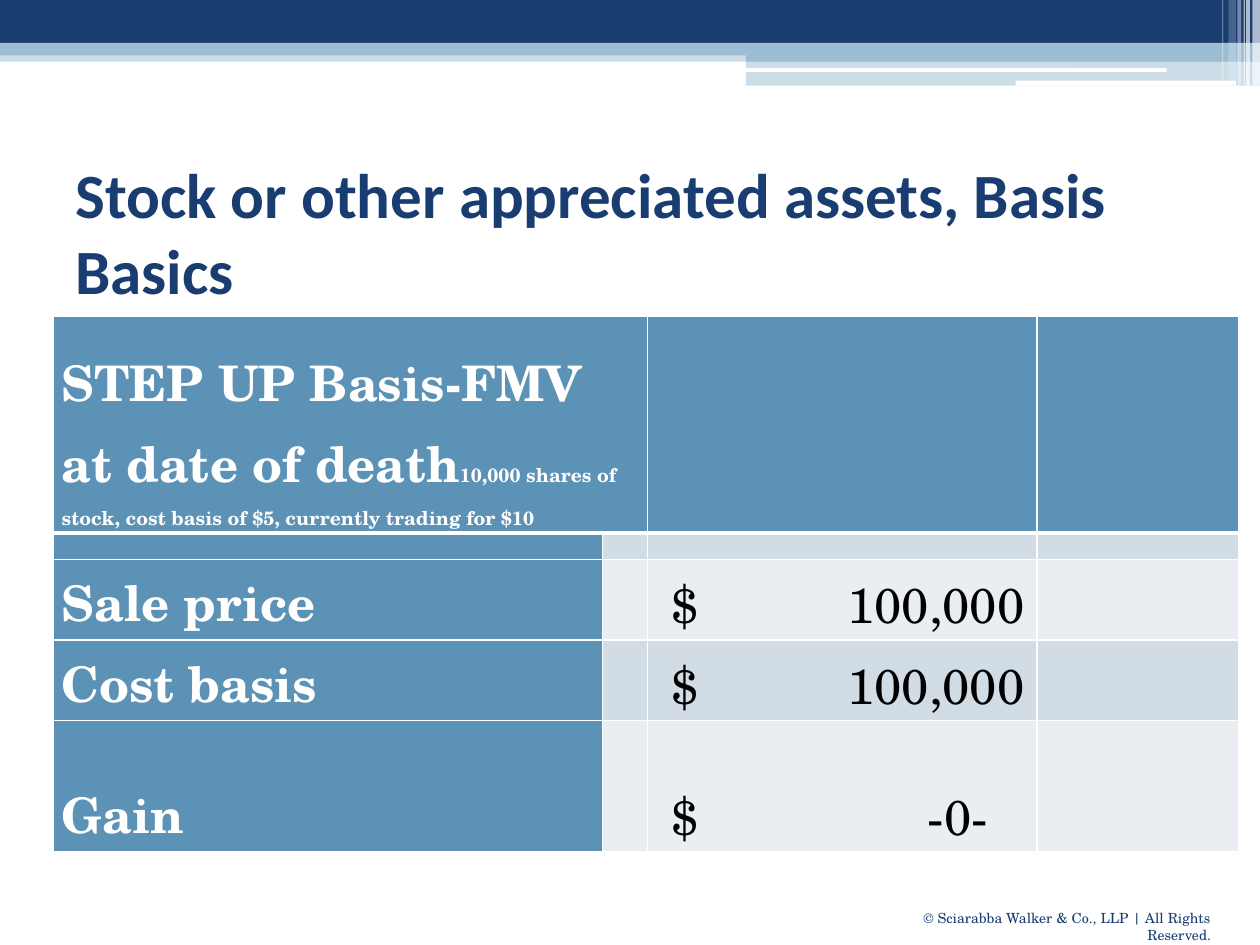
import pptx
import pptx.util
import pptx.dml.color
import pptx.enum.shapes
import pptx.enum.text
import pptx.oxml
import pptx.oxml.ns
from lxml import etree

RGBColor = pptx.dml.color.RGBColor
SHAPE = pptx.enum.shapes.MSO_SHAPE
ALIGN = pptx.enum.text.PP_ALIGN
ANCHOR = pptx.enum.text.MSO_ANCHOR
Pt = pptx.util.Pt
qn = pptx.oxml.ns.qn

NAVY = RGBColor(0x19, 0x3D, 0x71)
SKY = RGBColor(0x9D, 0xBD, 0xD2)
STEEL = RGBColor(0x5C, 0x92, 0xB5)
BAND_DARK = RGBColor(0xD2, 0xDC, 0xE5)
BAND_LIGHT = RGBColor(0xEA, 0xEE, 0xF3)
WHITE = RGBColor(0xFF, 0xFF, 0xFF)
BLACK = RGBColor(0, 0, 0)

SERIF = "TeX Gyre Schola"
SANS = "Calibri"
WIDTH, HEIGHT = pptx.util.Inches(10), pptx.util.Inches(7.5)
COL, ROW = WIDTH // 1000, HEIGHT // 750


def place(box):
    x, y, w, h = box
    return x * COL, y * ROW, w * COL, h * ROW


def style(r, font, size, color, bold=False):
    r.font.name = font
    r.font.size = Pt(size)
    r.font.bold = bold
    r.font.color.rgb = color


def add_bar(s, box, color, opacity=100, kind=SHAPE.RECTANGLE):
    sp = s.shapes.add_shape(kind, *place(box))
    sp.shadow.inherit = False
    sp.line.fill.background()
    sp.fill.solid()
    sp.fill.fore_color.rgb = color
    if opacity < 100:
        clr = sp.fill._xPr.find(".//" + qn("a:srgbClr"))
        etree.SubElement(clr, qn("a:alpha"), val=str(opacity * 1000))


def add_banner(s, box):
    x, y, w, h = box
    half = x + w * 0.59
    right = x + w
    add_bar(s, (x, y + 40, w, 9), SKY, 50)
    add_bar(s, (x, y, w, 34), NAVY)
    add_bar(s, (x, y + 34, w, 10), SKY)
    add_bar(s, (half + 2, y + 39, right - half - 2, 10), SKY)
    add_bar(s, (half + 2, y + 48, right - half - 2, 20), SKY, 50)
    add_bar(s, (half + 1, y + 54, 335, 3), WHITE, kind=SHAPE.ROUNDED_RECTANGLE)
    add_bar(s, (right - 194, y + 64, 175, 4), WHITE, kind=SHAPE.ROUNDED_RECTANGLE)
    stripes = [(6, 6, h, 65), (11, 3, h, 65), (13, 1, h, 60),
               (18, 3, h, 40), (25, 6, h - 4, 20), (30, 1, h - 4, 30)]
    for offset, width, height, opacity in stripes:
        add_bar(s, (right - offset, y, width, height), WHITE, opacity)


def add_text(s, box, text, font, size, bold=False, align=ALIGN.LEFT, anchor=ANCHOR.TOP):
    tf = s.shapes.add_textbox(*place(box)).text_frame
    tf.word_wrap = True
    tf.vertical_anchor = anchor
    p = tf.paragraphs[0]
    p.text = text
    p.alignment = align
    style(p.runs[0], font, size, NAVY, bold)


def add_border(cell, side, width):
    ln = etree.SubElement(cell._tc.get_or_add_tcPr(), qn("a:" + side), w=str(Pt(width)))
    fill = etree.SubElement(ln, qn("a:solidFill"))
    etree.SubElement(fill, qn("a:srgbClr"), val=str(WHITE))


def format_cell(cell, color, header):
    for side in ("lnL", "lnR", "lnT", "lnB"):
        add_border(cell, side, 3 if header and side == "lnB" else 1)
    cell.fill.solid()
    cell.fill.fore_color.rgb = color
    cell.vertical_anchor = ANCHOR.BOTTOM
    cell.margin_left = cell.margin_right = 7 * COL
    cell.margin_top = cell.margin_bottom = 0
    p = cell.text_frame.paragraphs[0]
    p.line_spacing = 1.07
    etree.SubElement(p._p, qn("a:endParaRPr"), sz="800")


def fill_label(cell, text, note=""):
    p = cell.text_frame.paragraphs[0]
    p.text = text
    style(p.runs[0], SERIF, 28, WHITE, True)
    if note:
        r = p.add_run()
        r.text = note
        style(r, SERIF, 11, WHITE, True)


def fill_amount(cell, amount, stop):
    cell.margin_left = 19 * COL
    p = cell.text_frame.paragraphs[0]
    tabs = etree.SubElement(p._p.get_or_add_pPr(), qn("a:tabLst"))
    etree.SubElement(tabs, qn("a:tab"), pos=str(stop * COL), algn="r")
    p.text = "$\t" + amount
    style(p.runs[0], SERIF, 28, BLACK)


def add_basis_table(s, box):
    widths = [436, 36, 309, 160]
    heights = [172, 21, 64, 64, 104]
    amounts = [("Sale price", "100,000", 280), ("Cost basis", "100,000", 280), ("Gain", "-0-", 251)]
    table = s.shapes.add_table(len(heights), len(widths), *place(box)).table
    for column, width in zip(table.columns, widths):
        column.width = width * COL
    for row, height in zip(table.rows, heights):
        row.height = height * ROW
    for i in range(len(heights)):
        band = BAND_DARK if i % 2 else BAND_LIGHT
        for j in range(len(widths)):
            format_cell(table.cell(i, j), STEEL if i == 0 or j == 0 else band, i == 0)
    table.cell(0, 0).merge(table.cell(0, 1))
    fill_label(table.cell(0, 0), "STEP UP Basis-FMV at date of death",
               "10,000 shares of stock, cost basis of $5, currently trading for $10")
    for i, (label, amount, stop) in enumerate(amounts, 2):
        fill_label(table.cell(i, 0), label)
        fill_amount(table.cell(i, 2), amount, stop)


def main():
    prs = pptx.Presentation()
    prs.slide_width, prs.slide_height = WIDTH, HEIGHT
    s = prs.slides.add_slide(prs.slide_layouts[6])
    add_banner(s, (0, 0, 1000, 68))
    add_text(s, (676, 717, 295, 24), "© Sciarabba Walker & Co., LLP | All Rights Reserved.",
             SERIF, 8, align=ALIGN.RIGHT)
    add_text(s, (50, 125, 900, 117), "Stock or other appreciated assets, Basis Basics",
             SANS, 36, bold=True, anchor=ANCHOR.MIDDLE)
    add_basis_table(s, (42, 251, 941, 425))
    prs.save("out.pptx")


if __name__ == "__main__":
    main()
